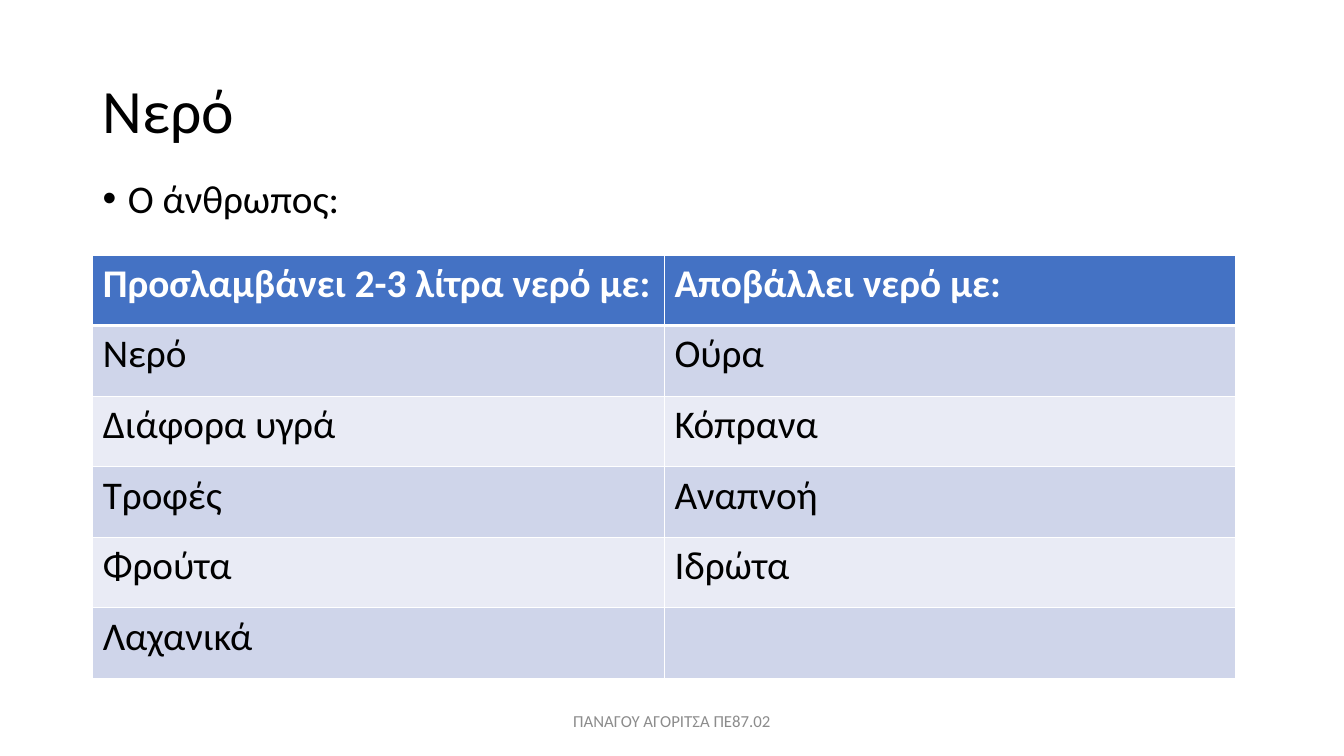
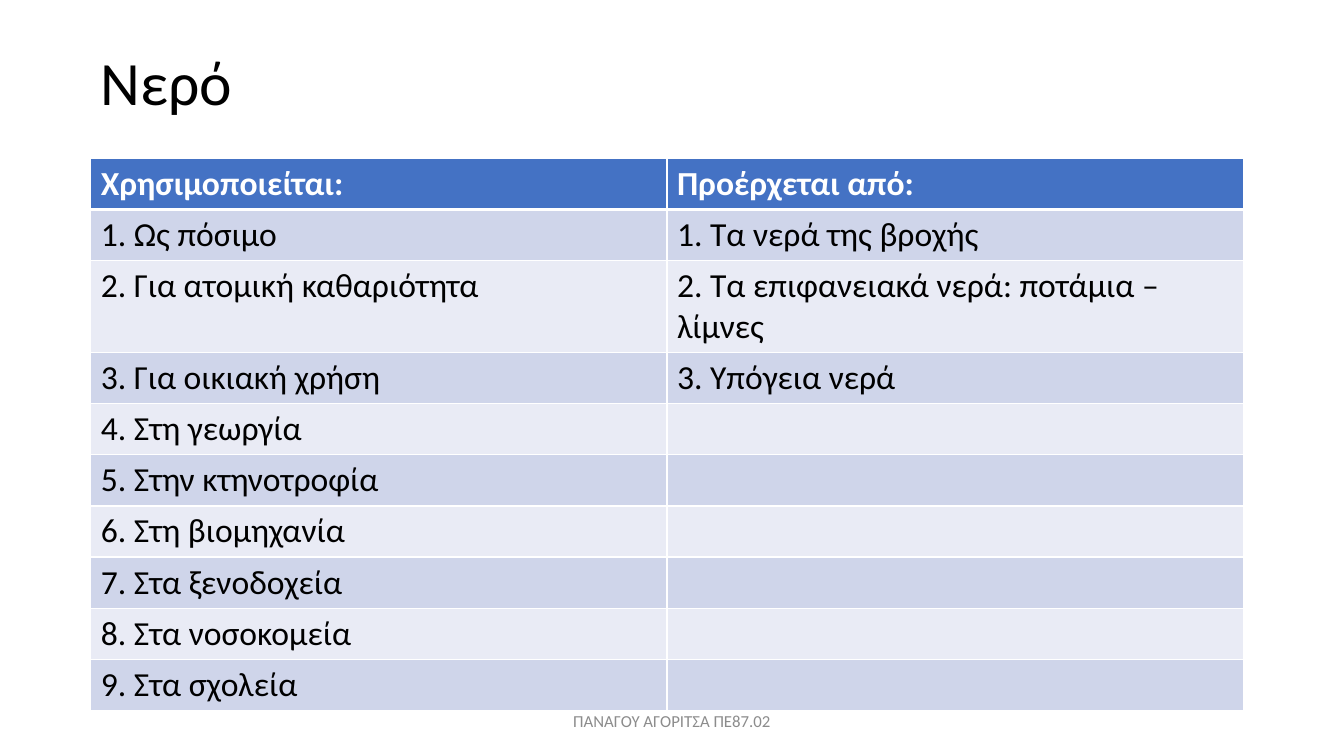
from lxml.etree import SubElement
from pptx import Presentation
from pptx.dml.color import RGBColor
from pptx.enum.text import MSO_ANCHOR, MSO_AUTO_SIZE, PP_ALIGN
from pptx.oxml.ns import qn
from pptx.util import Inches, Pt

# Content
TITLE = "Νερό"
FOOT = "ΠΑΝΑΓΟΥ ΑΓΟΡΙΤΣΑ ΠΕ87.02"
PAGES = [
    dict(
        title=(0.92, 0.4), lead="Ο άνθρωπος:",
        grid=(0.92, 2.53, 11.34), row=0.7, tall={}, size="large",
        heads=["Προσλαμβάνει 2-3 λίτρα νερό με:", "Αποβάλλει νερό με:"],
        cols=[
            ["Νερό", "Διάφορα υγρά", "Τροφές", "Φρούτα", "Λαχανικά"],
            ["Ούρα", "Κόπρανα", "Αναπνοή", "Ιδρώτα"],
        ],
    ),
    dict(
        title=(0.9, 0.12), lead=None,
        grid=(0.9, 1.57, 11.43), row=0.47, tall={2: 0.84}, size="mid",
        heads=["Χρησιμοποιείται:", "Προέρχεται από:"],
        cols=[
            ["1. Ως πόσιμο", "2. Για ατομική καθαριότητα",
             "3. Για οικιακή χρήση", "4. Στη γεωργία",
             "5. Στην κτηνοτροφία", "6. Στη βιομηχανία",
             "7. Στα ξενοδοχεία", "8. Στα νοσοκομεία", "9. Στα σχολεία"],
            ["1. Τα νερά της βροχής",
             "2. Τα επιφανειακά νερά: ποτάμια – λίμνες",
             "3. Υπόγεια νερά"],
        ],
    ),
]

# Look
THEME = dict(
    font="Calibri", ink="000000", white="FFFFFF", grey="8C8C8C",
    head="4472C4", bands=("CFD5EA", "E9EBF5"),
    title=44, large=28, mid=24, small=12,
)
WIDE, HIGH = 13.33, 7.5
BOX = (11.5, 1.45)


def style(para, text, size, ink="ink", bold=False, **form):
    """Write one paragraph and set its format values."""
    for key, val in form.items():
        setattr(para, key, val)
    run = para.add_run()
    run.text = text
    look = dict(name=THEME["font"], size=Pt(THEME[size]), bold=bold)
    for key, val in look.items():
        setattr(run.font, key, val)
    run.font.color.rgb = RGBColor.from_string(THEME[ink])


def add_box(slide, *place):
    frame = slide.shapes.add_textbox(*map(Inches, place)).text_frame
    frame.word_wrap = True
    return frame


def add_title(slide, left, top):
    shape = slide.shapes.title
    spots = zip(("left", "top", "width", "height"), (left, top, *BOX))
    for key, val in spots:
        setattr(shape, key, Inches(val))
    frame = shape.text_frame
    frame.auto_size = MSO_AUTO_SIZE.NONE
    frame.vertical_anchor = MSO_ANCHOR.MIDDLE
    style(frame.paragraphs[0], TITLE, "title",
          alignment=PP_ALIGN.LEFT, line_spacing=0.9)


def add_lead(slide, text, left):
    para = add_box(slide, left, 1.73, BOX[0], 0.7).paragraphs[0]
    props = para._p.get_or_add_pPr()
    for key, val in dict(marL=0.25, indent=-0.25).items():
        props.set(key, str(Inches(val)))
    SubElement(props, qn("a:buFont")).set("typeface", "Arial")
    SubElement(props, qn("a:buChar")).set("char", "•")
    style(para, text, "large", line_spacing=0.9)


def add_foot(slide):
    wide = 4.5
    frame = add_box(slide, (WIDE - wide) / 2, 6.95, wide, 0.4)
    frame.vertical_anchor = MSO_ANCHOR.MIDDLE
    style(frame.paragraphs[0], FOOT, "small", "grey",
          alignment=PP_ALIGN.CENTER)


def edge(cell, **sides):
    """Draw white cell borders; each side has a width in points."""
    props = cell._tc.get_or_add_tcPr()
    for side, width in sides.items():
        line = SubElement(props, qn(f"a:ln{side}"), w=str(Pt(width)))
        fill = SubElement(line, qn("a:solidFill"))
        SubElement(fill, qn("a:srgbClr"), val=THEME["white"])


def add_grid(slide, page):
    left, top, wide = page["grid"]
    count = 1 + max(map(len, page["cols"]))
    highs = [page["tall"].get(n, page["row"]) for n in range(count)]
    table = slide.shapes.add_table(
        count, len(page["heads"]),
        *map(Inches, (left, top, wide, sum(highs)))).table
    for row, high in zip(table.rows, highs):
        row.height = Inches(high)

    for c, (head, items) in enumerate(zip(page["heads"], page["cols"])):
        texts = [head, *items]
        for r in range(count):
            cell = table.cell(r, c)
            first = r == 0
            edge(cell, L=1, R=1, T=3 if r == 1 else 1, B=3 if first else 1)
            tint = THEME["head"] if first else THEME["bands"][(r - 1) % 2]
            cell.fill.solid()
            cell.fill.fore_color.rgb = RGBColor.from_string(tint)
            if r < len(texts):
                style(cell.text_frame.paragraphs[0], texts[r], page["size"],
                      "white" if first else "ink", first)


def main():
    deck = Presentation()
    deck.slide_width, deck.slide_height = Inches(WIDE), Inches(HIGH)
    plain = deck.slide_layouts.get_by_name("Title Only")
    for page in PAGES:
        slide = deck.slides.add_slide(plain)
        add_title(slide, *page["title"])
        if page["lead"]:
            add_lead(slide, page["lead"], page["title"][0])
        add_grid(slide, page)
        add_foot(slide)
    deck.save("out.pptx")


if __name__ == "__main__":
    main()
